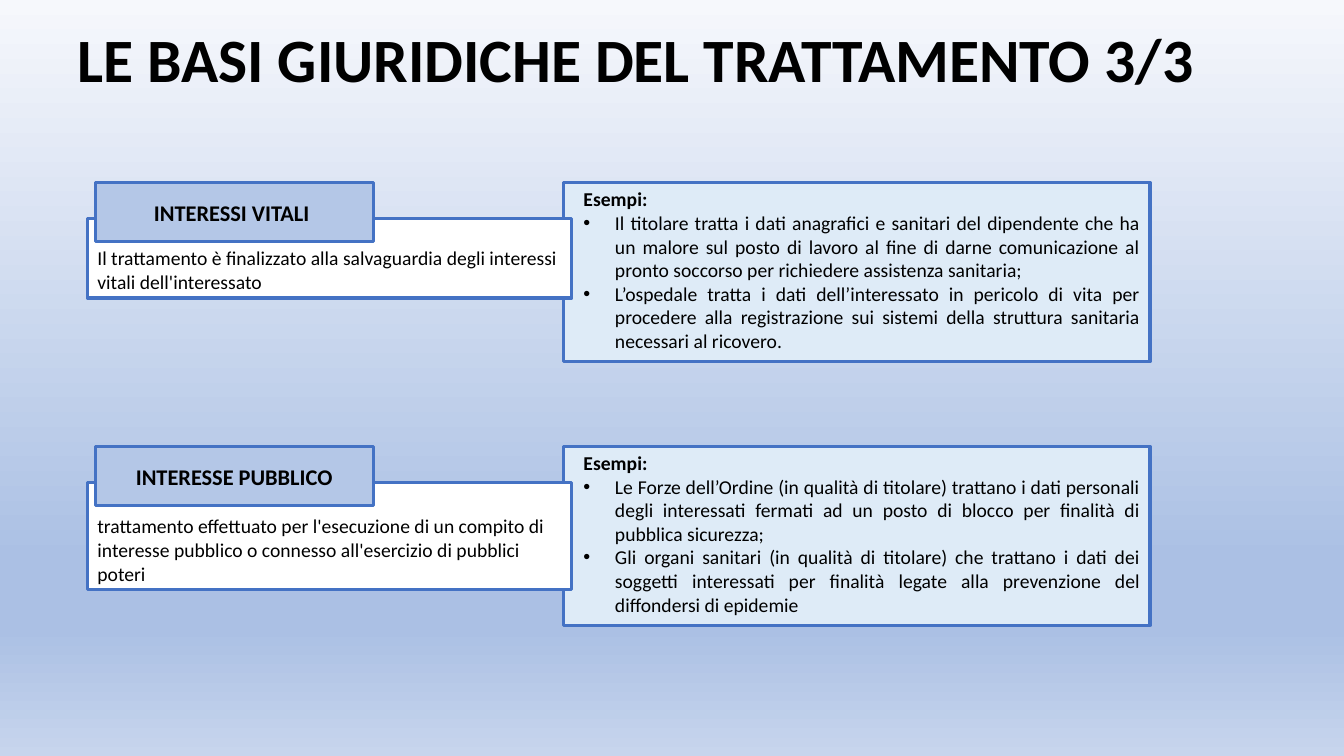
from pptx import Presentation
from pptx.dml.color import RGBColor
from pptx.enum.shapes import MSO_SHAPE
from pptx.enum.text import MSO_ANCHOR, MSO_AUTO_SIZE, PP_ALIGN
from pptx.oxml.ns import qn
from pptx.util import Pt
from lxml.etree import SubElement

HEX = {"text": "000000", "line": "4472C4", "label": "B4C7E7",
       "body": "FFFFFF", "cases": "DEEBF7"}
STOPS = [(0, "F6F8FC"), (74, "ABC0E4"), (83, "ABC0E4"), (100, "C7D5ED")]

BASES = [
    (130.3, 57, "INTERESSI VITALI ",
     "Il trattamento è finalizzato alla salvaguardia degli interessi vitali dell'interessato",
     ["Il titolare tratta i dati anagrafici e sanitari del dipendente che ha un malore sul posto "
      "di lavoro al fine di darne comunicazione al pronto soccorso per richiedere assistenza sanitaria;",
      "L’ospedale tratta i dati dell’interessato in pericolo di vita per procedere alla "
      "registrazione sui sistemi della struttura sanitaria necessari al ricovero."]),
    (318.8, 77, "INTERESSE PUBBLICO",
     "trattamento effettuato per l'esecuzione di un compito di interesse pubblico o connesso "
     "all'esercizio di pubblici poteri",
     ["Le Forze dell’Ordine (in qualità di titolare) trattano i dati personali degli interessati "
      "fermati ad un posto di blocco per finalità di pubblica sicurezza;",
      "Gli organi sanitari (in qualità di titolare) che trattano i dati dei soggetti interessati "
      "per finalità legate alla prevenzione del diffondersi di epidemie"]),
]


def style(par, size, bold, align=PP_ALIGN.LEFT):
    par.alignment = align
    for run in par.runs:
        font = run.font
        font.name, font.size, font.bold = "Calibri", Pt(size), bold
        font.color.rgb = RGBColor.from_string(HEX["text"])


def add_box(left, top, width, height, fill, anchor, text):
    box = slide.shapes.add_shape(MSO_SHAPE.RECTANGLE, Pt(left), Pt(top), Pt(width), Pt(height))
    box.shadow.inherit = False
    box.fill.solid()
    box.fill.fore_color.rgb = RGBColor.from_string(HEX[fill])
    box.line.color.rgb = RGBColor.from_string(HEX["line"])
    box.line.width = Pt(2.25)
    frame = box.text_frame
    frame.word_wrap = True
    frame.vertical_anchor = anchor
    frame.text = text
    return frame.paragraphs


deck = Presentation()
deck.slide_width, deck.slide_height = Pt(960), Pt(540)
slide = deck.slides.add_slide(deck.slide_layouts[5])

# Background gradient, from top to bottom
fill = slide.background.fill
fill.gradient()
fill.gradient_angle = 270
stops = slide.element.find(".//" + qn("a:gsLst"))
stops.clear()
for spot, shade in STOPS:
    stop = SubElement(stops, qn("a:gs"), pos=str(spot * 1000))
    SubElement(stop, qn("a:srgbClr"), val=shade)

title = slide.shapes.title
title.left, title.top, title.width, title.height = Pt(48), Pt(0), Pt(852.5), Pt(90)
frame = title.text_frame
frame.text = "LE BASI GIURIDICHE DEL TRATTAMENTO 3/3"
frame.auto_size = MSO_AUTO_SIZE.NONE
frame.vertical_anchor = MSO_ANCHOR.MIDDLE
frame.paragraphs[0].line_spacing = 0.9
style(frame.paragraphs[0], 44, True)

for top, height, label, body, cases in BASES:
    text = "\n".join(["Esempi:"] + cases)
    head, *items = add_box(402.5, top, 419, 128, "cases", MSO_ANCHOR.TOP, text)
    style(head, 14, True)
    head._p.get_or_add_pPr().set("marL", str(Pt(7.2)))
    for item in items:
        style(item, 14, False, PP_ALIGN.JUSTIFY)
        props = item._p.get_or_add_pPr()
        props.set("marL", str(Pt(29.7)))
        props.set("indent", str(Pt(-22.5)))
        SubElement(props, qn("a:buFont"), typeface="Arial")
        SubElement(props, qn("a:buChar"), char="•")

    pars = add_box(62.5, top + 25.6, 346, height, "body", MSO_ANCHOR.BOTTOM, body)
    style(pars[0], 14, False)
    pars = add_box(68, top, 198.5, 42.5, "label", MSO_ANCHOR.MIDDLE, label)
    style(pars[0], 16, True, PP_ALIGN.CENTER)

deck.save("out.pptx")
